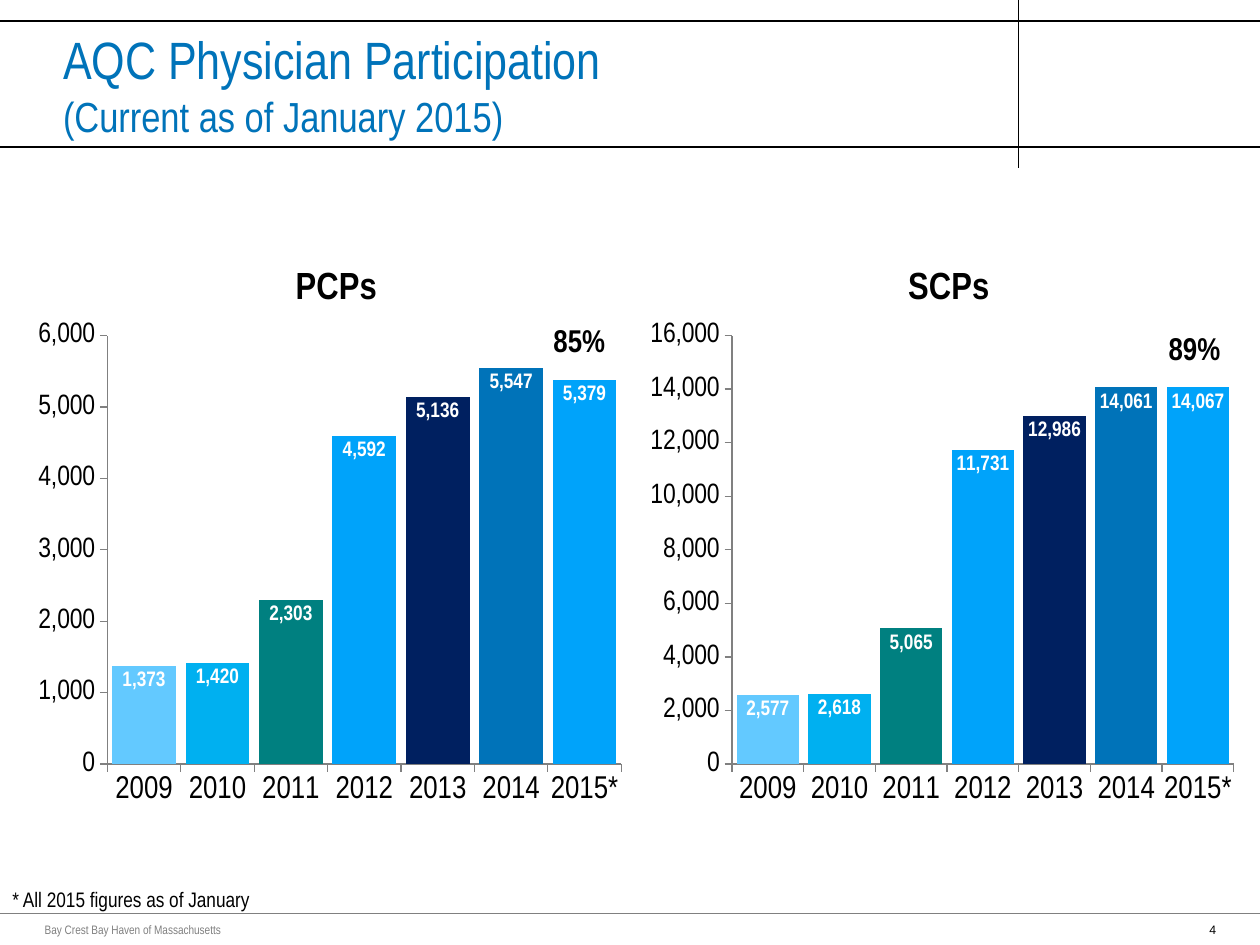
import pptx
import pptx.chart.data
import pptx.dml.color
import pptx.enum.chart
import pptx.enum.shapes
import pptx.enum.text
import pptx.oxml
import pptx.oxml.ns
import pptx.oxml.xmlchemy
import pptx.util
from dataclasses import dataclass

Pt = pptx.util.Pt
qn = pptx.oxml.ns.qn
CHART = pptx.enum.chart
TEXT = pptx.enum.text


@dataclass(frozen=True)
class Theme:
    font: str = "Arial Narrow"
    number_font: str = "Arial"
    ink: str = "000000"
    grey: str = "808080"
    blue: str = "0073B9"
    white: str = "FFFFFF"
    bars: tuple = ("63C9FF", "00B0F0", "008080", "00A3FA", "002060", "0073B9", "00A3FA")
    title: int = 30
    subtitle: int = 24
    chart_title: float = 21.6
    label: int = 18
    axis: int = 16
    note: int = 12
    footer: int = 7


def rgb(value):
    return pptx.dml.color.RGBColor.from_string(value)


def set_all(obj, values):
    for name, value in values.items():
        setattr(obj, name, value)


def set_layout(parent, index, **shares):
    old = parent.find(qn("c:layout"))
    if old is not None:
        parent.remove(old)
    items = "".join(f'<c:{k} val="{v}"/>' for k, v in shares.items())
    parent.insert(index, pptx.oxml.parse_xml(
        f'<c:layout {pptx.oxml.ns.nsdecls("c")}><c:manualLayout>{items}'
        '</c:manualLayout></c:layout>'))


class Deck:
    def __init__(self, theme):
        self.theme = theme
        self.prs = pptx.Presentation()
        set_all(self.prs, {"slide_width": Pt(720), "slide_height": Pt(540)})
        self.s = self.prs.slides.add_slide(self.prs.slide_layouts[5])

    def style(self, font, size, color=None, bold=False, name=None):
        set_all(font, {"name": name or self.theme.font, "size": Pt(size), "bold": bold})
        font.color.rgb = rgb(color or self.theme.ink)

    def line(self, x1, y1, x2, y2, color, width):
        c = self.s.shapes.add_connector(
            pptx.enum.shapes.MSO_CONNECTOR.STRAIGHT, Pt(x1), Pt(y1), Pt(x2), Pt(y2))
        c.line.color.rgb = rgb(color)
        c.line.width = Pt(width)
        c._element.spPr.append(pptx.oxml.xmlchemy.OxmlElement("a:effectLst"))

    def title(self, text, subtitle, left, top, width, height):
        sp = self.s.shapes.title
        set_all(sp, {"left": Pt(left), "top": Pt(top),
                     "width": Pt(width), "height": Pt(height)})
        tf = sp.text_frame
        set_all(tf, {"margin_left": 0, "margin_top": 0, "margin_right": 0,
                     "margin_bottom": 0, "word_wrap": True,
                     "auto_size": TEXT.MSO_AUTO_SIZE.NONE,
                     "vertical_anchor": TEXT.MSO_ANCHOR.MIDDLE})
        p = tf.paragraphs[0]
        p.alignment = TEXT.PP_ALIGN.LEFT
        r = p.add_run()
        r.text = text
        self.style(r.font, self.theme.title, self.theme.blue)
        p.add_line_break()
        r = p.add_run()
        r.text = subtitle
        self.style(r.font, self.theme.subtitle, self.theme.blue)

    def text(self, text, left, top, width, height, size, wrap=True,
             align=TEXT.PP_ALIGN.LEFT, anchor=TEXT.MSO_ANCHOR.MIDDLE, **font):
        sp = self.s.shapes.add_textbox(Pt(left), Pt(top), Pt(width), Pt(height))
        tf = sp.text_frame
        set_all(tf, {"word_wrap": wrap, "vertical_anchor": anchor})
        p = tf.paragraphs[0]
        p.alignment = align
        r = p.add_run()
        r.text = text
        self.style(r.font, size, **font)

    def chart(self, name, cats, vals, left, top, width, height, step, top_value, plot_x):
        data = pptx.chart.data.CategoryChartData(number_format="#,##0")
        data.categories = cats
        data.add_series(name, vals)
        chart = self.s.shapes.add_chart(
            CHART.XL_CHART_TYPE.COLUMN_CLUSTERED,
            Pt(left), Pt(top), Pt(width), Pt(height), data).chart
        set_all(chart, {"has_legend": False, "has_title": True})
        self.style(chart.font, self.theme.label)

        p = chart.chart_title.text_frame.paragraphs[0]
        r = p.add_run()
        r.text = name
        self.style(r.font, self.theme.chart_title, bold=True)
        set_layout(chart.chart_title._element, 1,
                   xMode="edge", yMode="edge", x=0.43, y=0.04)
        set_layout(chart._chartSpace.chart.plotArea, 0,
                   layoutTarget="inner", xMode="edge", yMode="edge",
                   x=plot_x, y=0.17, w=round(0.98 - plot_x, 2), h=0.74)

        set_all(chart.value_axis, {"minimum_scale": 0, "maximum_scale": top_value,
                                   "major_unit": step})
        for axis, size in ((chart.category_axis, self.theme.label),
                           (chart.value_axis, self.theme.axis)):
            set_all(axis, {"has_major_gridlines": False,
                           "major_tick_mark": CHART.XL_TICK_MARK.OUTSIDE,
                           "minor_tick_mark": CHART.XL_TICK_MARK.NONE})
            axis.format.line.color.rgb = rgb(self.theme.grey)
            self.style(axis.tick_labels.font, size)
        set_all(chart.value_axis.tick_labels,
                {"number_format": "#,##0", "number_format_is_linked": False})

        plot = chart.plots[0]
        set_all(plot, {"gap_width": 15, "vary_by_categories": False})
        series = plot.series[0]
        for i, color in enumerate(self.theme.bars):
            fill = series.points[i].format.fill
            fill.solid()
            fill.fore_color.rgb = rgb(color)
        labels = series.data_labels
        set_all(labels, {"show_value": True, "number_format": "#,##0",
                         "number_format_is_linked": False,
                         "position": CHART.XL_LABEL_POSITION.INSIDE_END})
        self.style(labels.font, self.theme.note, self.theme.white, bold=True)


def main():
    theme = Theme()
    deck = Deck(theme)

    deck.line(582, 0, 582, 96, theme.ink, 0.75)
    deck.line(0, 522, 720, 522, theme.grey, 0.5)
    for y, right in ((12, 720), (84, 726)):
        deck.line(0, y, right, y, theme.ink, 0.75)

    top = TEXT.MSO_ANCHOR.TOP
    deck.text("4", 684, 523.5, 24.5, 16, theme.footer, anchor=top, name=theme.number_font)
    deck.text("Bay Crest Bay Haven of Massachusetts", 18.5, 523.5, 119.5, 16,
              theme.footer, wrap=False, anchor=top, color=theme.grey)
    deck.title("AQC Physician Participation", "(Current as of January 2015)",
               36, 12, 546, 72)

    years = ["2009", "2010", "2011", "2012", "2013", "2014", "2015*"]
    deck.chart("SCPs", years, (2577, 2618, 5065, 11731, 12986, 14061, 14067),
               366.5, 135.5, 345.5, 331, 2000, 16000, 0.15)
    deck.chart("PCPs", years, (1373, 1420, 2303, 4592, 5136, 5547, 5379),
               16.5, 135.5, 345.5, 331, 1000, 6000, 0.13)

    for share, left, y in (("85%", 306.5, 182), ("89%", 658, 186.5)):
        deck.text(share, left, y, 49, 24.5, theme.label,
                  align=TEXT.PP_ALIGN.CENTER, bold=True)
    deck.text("* All 2015 figures as of January", 0, 497, 253.5, 34, theme.note)

    deck.prs.save("out.pptx")


if __name__ == "__main__":
    main()
